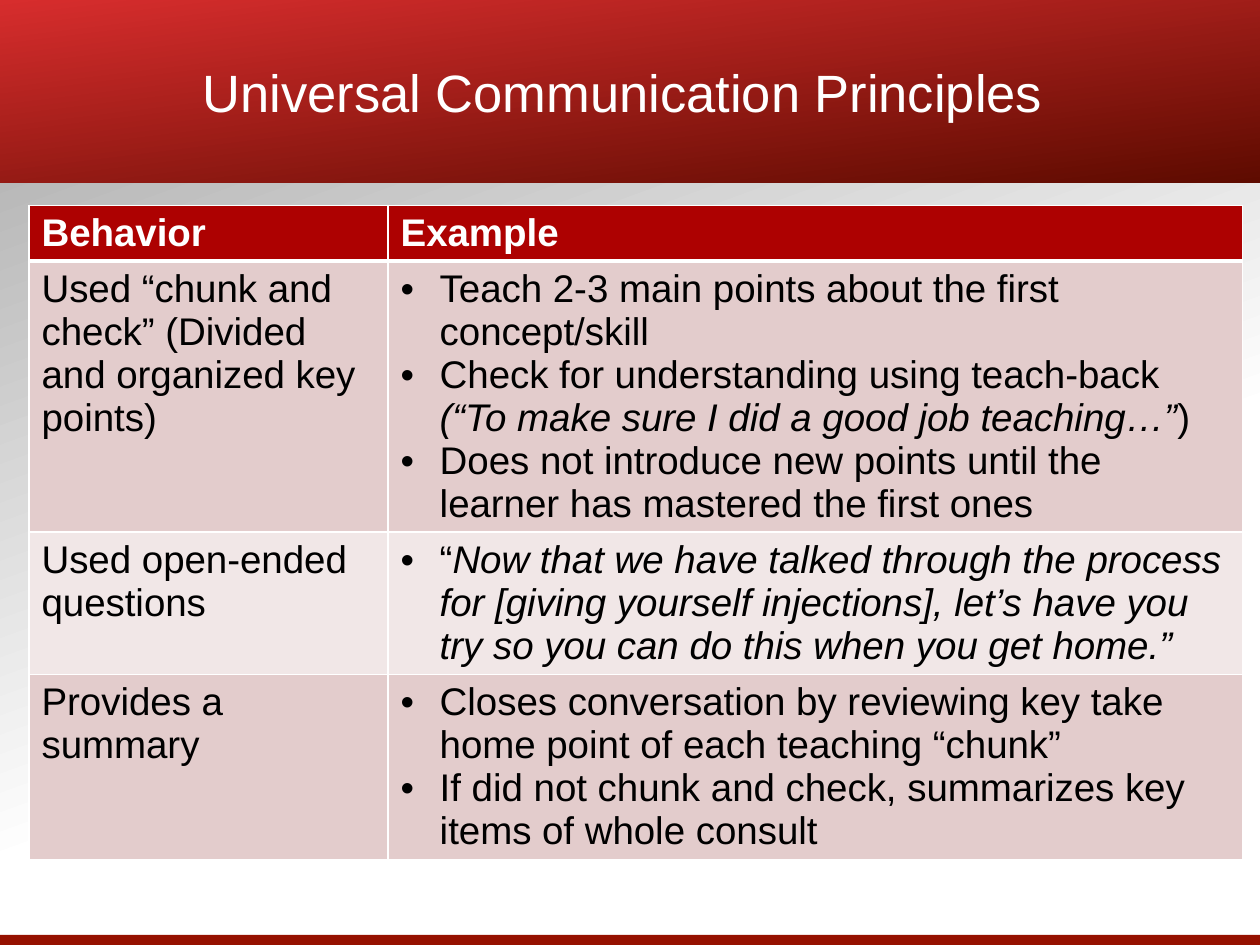
from lxml import etree
from pptx import Presentation
from pptx.dml.color import RGBColor
from pptx.enum.shapes import MSO_SHAPE
from pptx.enum.text import MSO_ANCHOR, PP_ALIGN
from pptx.oxml.ns import qn
from pptx.util import Inches, Pt

RECT = MSO_SHAPE.RECTANGLE
MIDDLE = MSO_ANCHOR.MIDDLE
CENTER = PP_ALIGN.CENTER
FONT = "Arial"
COLORS = {
    "white": "FFFFFF", "black": "000000", "gray": "A6A6A6",
    "title_light": "D72D2D", "title_dark": "5E0B00", "footer": "951100",
    "header": "AD0101", "band_dark": "E3CCCC", "band_light": "F1E7E7",
}
COL_WIDTHS = [2.85, 6.78]
ROW_HEIGHTS = [0.44, 2.15, 1.13, 1.46]
ROWS = [
    ("Used “chunk and check” (Divided and organized key points)", [
        [("Teach 2-3 main points about the first concept/skill", False)],
        [("Check for understanding using teach-back ", False),
         ("(“To make sure I did a good job teaching…”", True),
         (")", False)],
        [("Does not introduce new points until the learner has mastered "
          "the first ones", False)],
    ]),
    ("Used open-ended questions", [
        [("“", False),
         ("Now that we have talked through the process for [giving yourself "
          "injections], let’s have you try so you can do this when you get "
          "home.”", True)],
    ]),
    ("Provides a summary", [
        [("Closes conversation by reviewing key take home point of each "
          "teaching “chunk”", False)],
        [("If did not chunk and check, summarizes key items of whole consult",
          False)],
    ]),
]


def rgb(name):
    """Return the named colour."""
    return RGBColor.from_string(COLORS[name])


def set_gradient(fill, start, end, end_position, angle):
    """Fill with two colours along a clockwise angle."""
    fill.gradient()
    fill.gradient_angle = 360 - angle
    for stop, name, position in zip(fill.gradient_stops, (start, end), (0, end_position)):
        stop.color.rgb = rgb(name)
        stop.position = position


def add_run(p, text, size, color, bold=False, italic=False):
    """Append a formatted run to a paragraph."""
    r = p.add_run()
    r.text = text
    r.font.name = FONT
    r.font.size = Pt(size)
    r.font.bold = bold
    r.font.italic = italic
    r.font.color.rgb = rgb(color)


def add_bar(s, top, height):
    """Add a plain bar across the whole slide."""
    sp = s.shapes.add_shape(RECT, 0, Inches(top), Inches(10), Inches(height))
    sp.shadow.inherit = False
    sp.line.fill.background()
    return sp


def add_title(s, text):
    """Add the gradient title band."""
    sp = add_bar(s, 0, 1.45)
    set_gradient(sp.fill, "title_light", "title_dark", 1, 83)
    tf = sp.text_frame
    tf.word_wrap = True
    tf.vertical_anchor = MIDDLE
    p = tf.paragraphs[0]
    p.alignment = CENTER
    add_run(p, text, 30, "white")


def set_bullet(p):
    """Give a paragraph a hanging bullet."""
    pPr = p._p.get_or_add_pPr()
    pPr.set("marL", str(Inches(0.31)))
    pPr.set("indent", str(-Inches(0.31)))
    etree.SubElement(pPr, qn("a:buFont")).set("typeface", FONT)
    etree.SubElement(pPr, qn("a:buChar")).set("char", "•")


def style_cell(cell, fill, top=1, bottom=1):
    """Set a cell's white borders and its fill."""
    tcPr = cell._tc.get_or_add_tcPr()
    for side, width in (("L", 1), ("R", 1), ("T", top), ("B", bottom)):
        ln = etree.SubElement(tcPr, qn(f"a:ln{side}"), w=str(Pt(width)))
        solid = etree.SubElement(ln, qn("a:solidFill"))
        etree.SubElement(solid, qn("a:srgbClr")).set("val", COLORS["white"])
    cell.fill.solid()
    cell.fill.fore_color.rgb = rgb(fill)


def fill_bullets(cell, bullets):
    """Write bulleted paragraphs into a cell."""
    tf = cell.text_frame
    for i, runs in enumerate(bullets):
        p = tf.add_paragraph() if i else tf.paragraphs[0]
        set_bullet(p)
        for text, italic in runs:
            add_run(p, text, 22, "black", italic=italic)


def add_behavior_table(s):
    """Add the table of behaviors and examples."""
    table = s.shapes.add_table(
        len(ROW_HEIGHTS), len(COL_WIDTHS), Inches(0.23), Inches(1.63),
        Inches(sum(COL_WIDTHS)), Inches(sum(ROW_HEIGHTS))).table
    for column, width in zip(table.columns, COL_WIDTHS):
        column.width = Inches(width)
    for row, height in zip(table.rows, ROW_HEIGHTS):
        row.height = Inches(height)
    for cell, text in zip(table.rows[0].cells, ("Behavior", "Example")):
        style_cell(cell, "header", bottom=3)
        add_run(cell.text_frame.paragraphs[0], text, 22, "white", bold=True)
    for i, (behavior, bullets) in enumerate(ROWS, start=1):
        for cell in table.rows[i].cells:
            style_cell(cell, "band_dark" if i % 2 else "band_light", top=3 if i == 1 else 1)
        add_run(table.cell(i, 0).text_frame.paragraphs[0], behavior, 22, "black")
        fill_bullets(table.cell(i, 1), bullets)


def main():
    """Build and save the slide."""
    prs = Presentation()
    prs.slide_width, prs.slide_height = Inches(10), Inches(7.5)
    s = prs.slides.add_slide(prs.slide_layouts[6])
    set_gradient(s.background.fill, "gray", "white", 0.62, 70)
    footer = add_bar(s, 7.42, 0.1)
    footer.fill.solid()
    footer.fill.fore_color.rgb = rgb("footer")
    add_title(s, "Universal Communication Principles ")
    add_behavior_table(s)
    prs.save("out.pptx")


if __name__ == "__main__":
    main()
